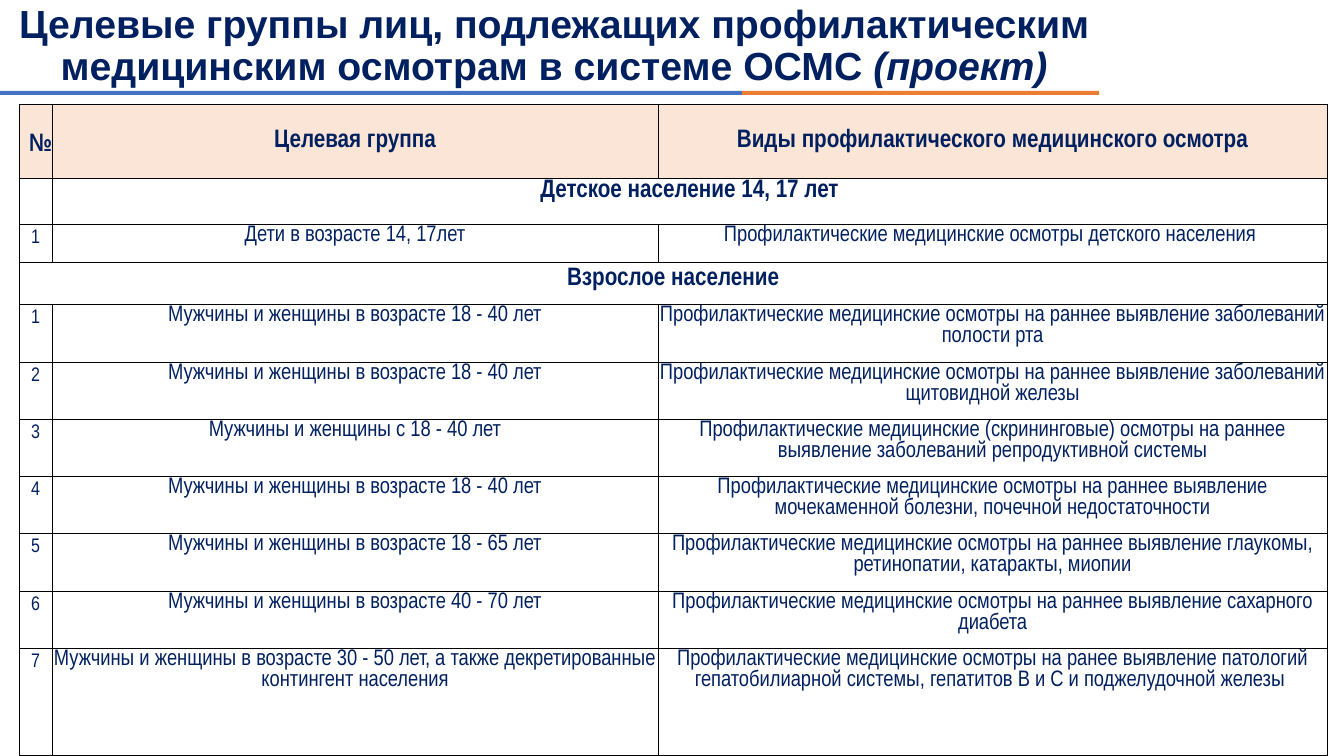
import itertools

import lxml.etree
import pptx
import pptx.dml.color
import pptx.enum.shapes
import pptx.enum.text
import pptx.oxml.ns
import pptx.util

EMU_PER_PX = 9071
COLORS = {
    "navy": "002060",
    "blue": "4472C4",
    "orange": "ED7D31",
    "peach": "FBE5D6",
    "black": "000000",
}
EXAM = "Профилактические медицинские осмотры "
EARLY = EXAM + "на раннее выявление "
ADULTS = "Мужчины и женщины в возрасте "
HEADER = ["№", "Целевая группа", "Виды профилактического медицинского осмотра"]
CHILDREN = ["1", "Дети в возрасте 14, 17лет", EXAM + "детского населения "]
ADULT_GROUPS = [
    (ADULTS + "18 - 40 лет", EARLY + "заболеваний полости рта"),
    (ADULTS + "18 - 40 лет", EARLY + "заболеваний щитовидной железы"),
    ("Мужчины и женщины с 18 - 40 лет",
     "Профилактические медицинские (скрининговые) осмотры на раннее выявление "
     "заболеваний репродуктивной системы"),
    (ADULTS + "18 - 40 лет", EARLY + "мочекаменной болезни, почечной недостаточности"),
    (ADULTS + "18 - 65 лет", EARLY + "глаукомы, ретинопатии, катаракты, миопии"),
    (ADULTS + "40 - 70 лет", EARLY + "сахарного диабета"),
    (ADULTS + "30 - 50 лет, а также декретированные контингент населения",
     EXAM + "на ранее выявление патологий гепатобилиарной системы, "
     "гепатитов В и С и поджелудочной железы "),
]
COLUMN_EDGES = [19, 52, 658, 1327]
ROW_EDGES = [104, 178, 224, 262, 304, 362, 419, 476, 533, 591, 648, 755]


def px(length):
    return pptx.util.Emu(length * EMU_PER_PX)


def rgb(name):
    return pptx.dml.color.RGBColor.from_string(COLORS[name])


class SlideBuilder:
    def __init__(self, slide):
        self.slide = slide

    def bar(self, left, top, width, height, color):
        shape = self.slide.shapes.add_shape(
            pptx.enum.shapes.MSO_SHAPE.RECTANGLE,
            px(left), px(top), px(width), px(height))
        shape.shadow.inherit = False
        shape.fill.solid()
        shape.fill.fore_color.rgb = rgb(color)
        shape.line.fill.background()

    def run(self, paragraph, text, size, font="Arial Narrow", bold=False, italic=False):
        run = paragraph.add_run()
        run.text = text
        run.font.name = font
        run.font.size = pptx.util.Pt(size)
        run.font.bold = bold
        run.font.italic = italic
        run.font.color.rgb = rgb("navy")

    def title(self, left, top, width, height, text, remark):
        shape = self.slide.shapes.add_textbox(px(left), px(top), px(width), px(height))
        frame = shape.text_frame
        frame.word_wrap = True
        frame.vertical_anchor = pptx.enum.text.MSO_ANCHOR.MIDDLE
        paragraph = frame.paragraphs[0]
        paragraph.alignment = pptx.enum.text.PP_ALIGN.CENTER
        paragraph.line_spacing = 0.9
        self.run(paragraph, text, 28, "Arial", bold=True)
        self.run(paragraph, remark, 28, "Arial", bold=True, italic=True)

    def table(self, column_edges, row_edges):
        table = self.slide.shapes.add_table(
            len(row_edges) - 1, len(column_edges) - 1,
            px(column_edges[0]), px(row_edges[0]),
            px(column_edges[-1] - column_edges[0]),
            px(row_edges[-1] - row_edges[0])).table
        table.first_row = table.horz_banding = False
        for column, (start, end) in zip(table.columns, itertools.pairwise(column_edges)):
            column.width = px(end - start)
        for row, (start, end) in zip(table.rows, itertools.pairwise(row_edges)):
            row.height = px(end - start)
        for cell in table.iter_cells():
            cell.fill.background()
            self.cell_borders(cell)
        return table

    def cell_borders(self, cell):
        properties = cell._tc.get_or_add_tcPr()
        qn = pptx.oxml.ns.qn
        for index, side in enumerate(("a:lnL", "a:lnR", "a:lnT", "a:lnB")):
            line = lxml.etree.Element(qn(side), w=str(pptx.util.Pt(0.5)))
            fill = lxml.etree.SubElement(line, qn("a:solidFill"))
            lxml.etree.SubElement(fill, qn("a:srgbClr"), val=COLORS["black"])
            properties.insert(index, line)

    def cell_text(self, cell, text, size, bold=False, tight=False):
        """Fill a centred cell; tight cells have almost no margins."""
        if tight:
            cell.margin_left = cell.margin_right = px(1)
            cell.margin_top = cell.margin_bottom = px(1)
        paragraph = cell.text_frame.paragraphs[0]
        paragraph.alignment = pptx.enum.text.PP_ALIGN.CENTER
        self.run(paragraph, text, size, bold=bold)

    def header_row(self, table, texts):
        for column, text in enumerate(texts):
            cell = table.cell(0, column)
            cell.fill.solid()
            cell.fill.fore_color.rgb = rgb("peach")
            cell.vertical_anchor = pptx.enum.text.MSO_ANCHOR.MIDDLE
            self.cell_text(cell, text, 18, bold=True)
        number = table.cell(0, 0)
        number.vertical_anchor = pptx.enum.text.MSO_ANCHOR.TOP
        number.margin_top = px(29)

    def section_row(self, table, row, first_column, text, tight):
        cell = table.cell(row, first_column)
        cell.merge(table.cell(row, 2))
        self.cell_text(cell, text, 18, bold=True, tight=tight)

    def group_row(self, table, row, number, group, examination):
        self.cell_text(table.cell(row, 0), number, 14)
        self.cell_text(table.cell(row, 1), group, 16, tight=True)
        self.cell_text(table.cell(row, 2), examination, 16, tight=True)


def main():
    presentation = pptx.Presentation()
    presentation.slide_width = pptx.util.Inches(13.33)
    presentation.slide_height = pptx.util.Inches(7.5)
    builder = SlideBuilder(presentation.slides.add_slide(presentation.slide_layouts[6]))

    builder.bar(0, 91, 742, 4, "blue")
    builder.bar(742, 91, 357, 4, "orange")
    builder.title(0, -1, 1108, 95,
                  "Целевые группы лиц, подлежащих профилактическим "
                  "медицинским осмотрам в системе ОСМС ", "(проект)")

    table = builder.table(COLUMN_EDGES, ROW_EDGES)
    builder.header_row(table, HEADER)
    builder.section_row(table, 1, 1, "Детское население 14, 17 лет", tight=True)
    builder.group_row(table, 2, *CHILDREN)
    builder.section_row(table, 3, 0, "Взрослое население", tight=False)
    for number, (group, examination) in enumerate(ADULT_GROUPS, start=1):
        builder.group_row(table, 3 + number, str(number), group, examination)

    presentation.save("out.pptx")


if __name__ == "__main__":
    main()
